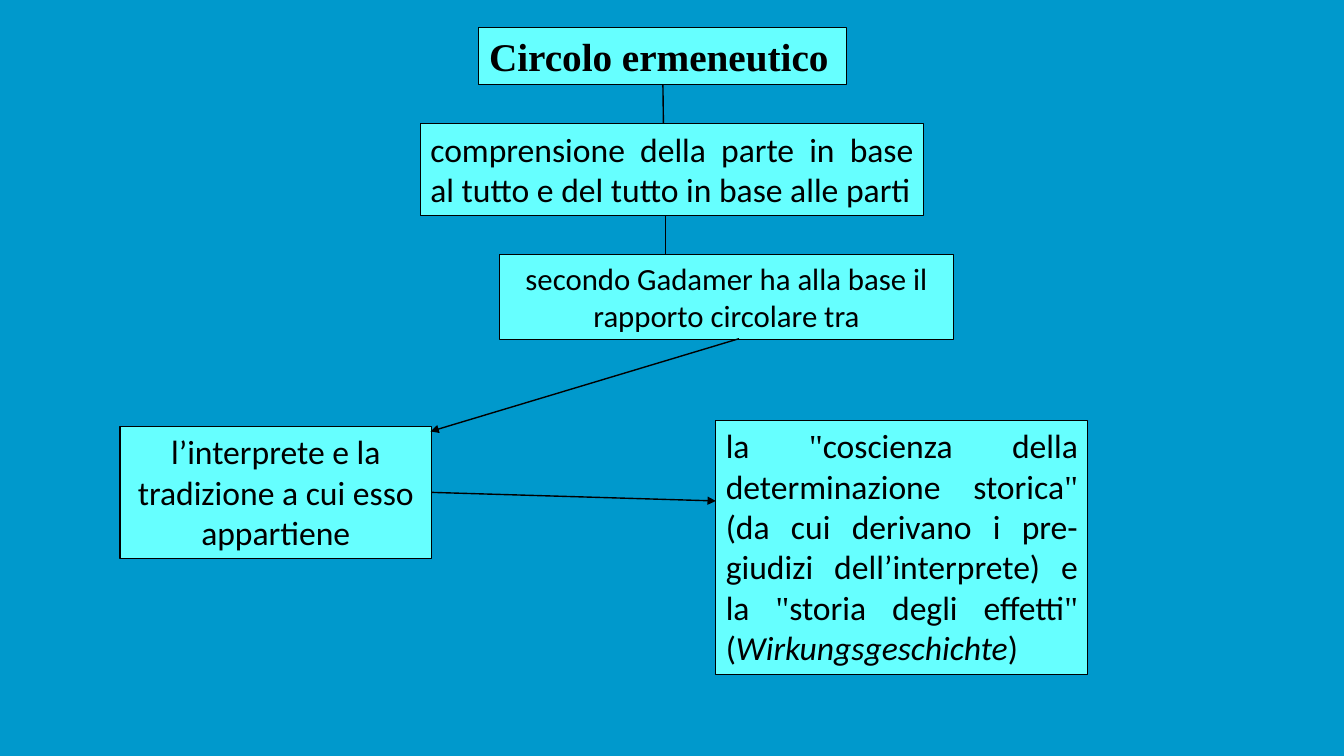
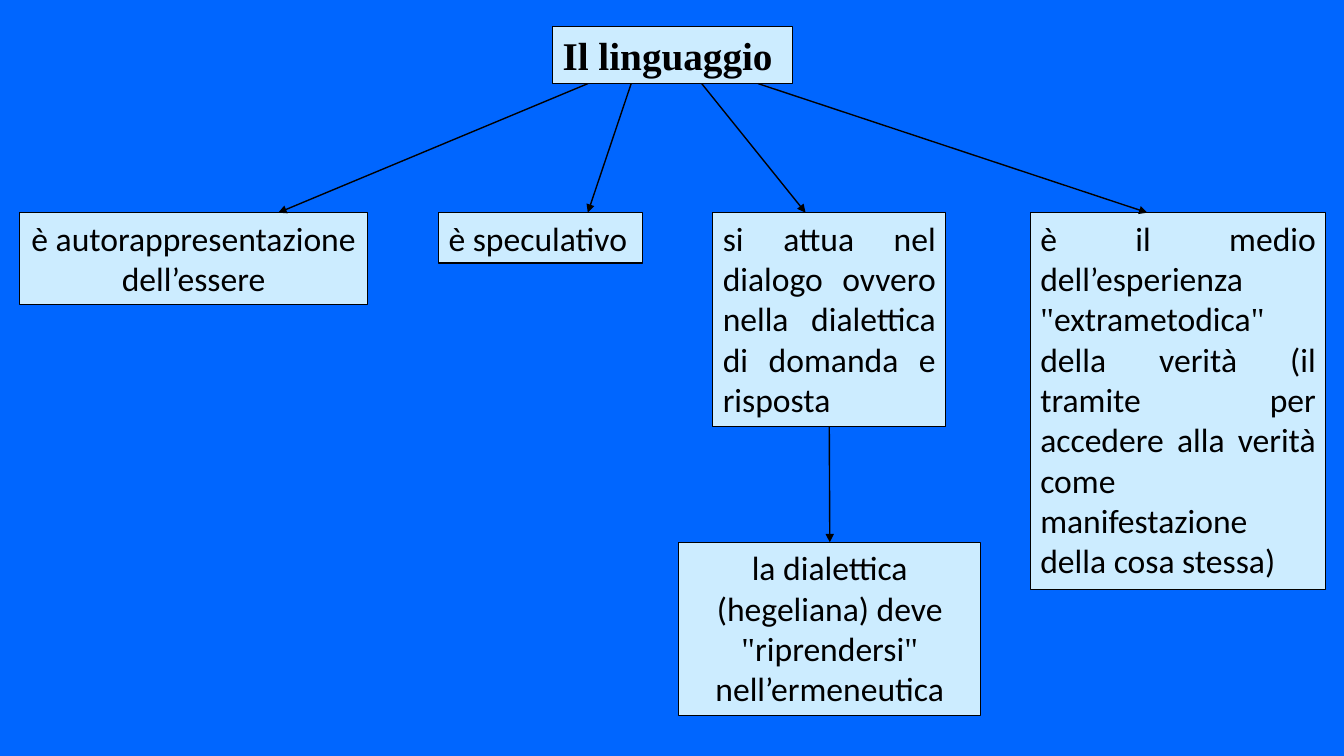
from dataclasses import dataclass

from lxml.etree import SubElement
from pptx import Presentation
from pptx.dml.color import RGBColor as RGB
from pptx.enum.shapes import MSO_CONNECTOR as Conn
from pptx.enum.text import MSO_ANCHOR as Anchor, MSO_AUTO_SIZE as Auto, PP_ALIGN as Align
from pptx.oxml.ns import qn
from pptx.util import Inches, Pt


@dataclass(frozen=True)
class Theme:
    ink: RGB = RGB(0x00, 0x00, 0x00)
    teal: RGB = RGB(0x00, 0x99, 0xCC)
    aqua: RGB = RGB(0x66, 0xFF, 0xFF)
    blue: RGB = RGB(0x00, 0x66, 0xFF)
    pale: RGB = RGB(0xCC, 0xEC, 0xFF)
    serif: str = "Times New Roman"
    sans: str = "Calibri"
    head: int = 28
    body: int = 24
    small: int = 22
    edge: float = 0.75
    rule: float = 1


THEME = Theme()
TOP, BOTTOM, RIGHT = 0, 2, 3


def style(shape, fill, align, face, size, bold=False):
    shape.fill.solid()
    shape.fill.fore_color.rgb = fill
    shape.line.color.rgb = THEME.ink
    shape.line.width = Pt(THEME.edge)
    frame = shape.text_frame
    frame.auto_size = Auto.NONE
    frame.word_wrap = True
    frame.vertical_anchor = Anchor.TOP
    para = frame.paragraphs[0]
    para.alignment = align
    font = para.font
    font.name, font.size, font.bold = face, Pt(size), bold
    font.color.rgb = THEME.ink
    return para


def write(para, text):
    """Add runs: quotation marks go in serif, text between asterisks in italic."""
    for i, part in enumerate(text.split('"')):
        if i:
            mark = para.add_run()
            mark.text = '"'
            mark.font.name = THEME.serif
        for j, piece in enumerate(part.split("*")):
            if piece:
                run = para.add_run()
                run.text = piece
                if j % 2:
                    run.font.italic = True


def start(deck, back, fill, text, area):
    """Add a slide with its background and boxed title."""
    slide = deck.slides.add_slide(deck.slide_layouts[5])
    slide.background.fill.solid()
    slide.background.fill.fore_color.rgb = back
    title = slide.shapes.title
    title.left, title.top, title.width, title.height = map(Inches, area)
    para = style(title, fill, Align.LEFT, THEME.serif, THEME.head, True)
    write(para, text)
    return slide


def box(slide, fill, text, area, align=Align.CENTER, size=THEME.body):
    shape = slide.shapes.add_textbox(*map(Inches, area))
    write(style(shape, fill, align, THEME.sans, size), text)
    return shape


def link(slide, tail, tip, arrow=True):
    """Draw a line; each end is an (x, y) point or a (shape, side) pair."""
    joins = [not isinstance(end[0], (int, float)) for end in (tail, tip)]
    spots = [(0, 0) if join else end for join, end in zip(joins, (tail, tip))]
    line = slide.shapes.add_connector(
        Conn.STRAIGHT, *(Inches(n) for spot in spots for n in spot))
    if joins[0]:
        line.begin_connect(*tail)
    if joins[1]:
        line.end_connect(*tip)
    line.line.color.rgb = THEME.ink
    line.line.width = Pt(THEME.rule)
    if arrow:
        SubElement(line.line._get_or_add_ln(), qn("a:tailEnd"), type="triangle")
    SubElement(line._element.spPr, qn("a:effectLst"))


def circle(deck):
    fill = THEME.aqua
    slide = start(deck, THEME.teal, fill, "Circolo ermeneutico", (4.75, 0.27, 3.65, 0.57))
    box(slide, fill,
        "comprensione della parte in base al tutto e del tutto in base alle parti",
        (4.17, 1.23, 4.99, 0.91), Align.JUSTIFY)
    box(slide, fill, "secondo Gadamer ha alla base il rapporto circolare tra",
        (4.95, 2.53, 4.51, 0.84), size=THEME.small)
    reader = box(slide, fill, "l’interprete e la tradizione a cui esso appartiene",
                 (1.19, 4.23, 3.09, 1.31))
    box(slide, fill,
        'la "coscienza della determinazione storica" (da cui derivano i pre-giudizi '
        'dell’interprete) e la "storia degli effetti" (*Wirkungsgeschichte*)',
        (7.1, 4.17, 3.69, 2.52), Align.JUSTIFY)
    link(slide, (slide.shapes.title, BOTTOM), (6.58, 1.23), arrow=False)
    link(slide, (6.6, 2.14), (6.6, 2.53), arrow=False)
    link(slide, (7.33, 3.36), (4.27, 4.28))
    link(slide, (reader, RIGHT), (7.1, 4.97))


def language(deck):
    fill, row, base = THEME.pale, 2.11, 0.83
    slide = start(deck, THEME.blue, fill, "Il linguaggio", (5.48, 0.26, 2.38, 0.57))
    box(slide, fill, "è autorappresentazione dell’essere", (0.19, row, 3.46, 0.91))
    box(slide, fill, "è speculativo", (4.35, row, 2.02, 0.5), Align.LEFT)
    talk = box(slide, fill,
               "si attua nel dialogo ovvero nella dialettica di domanda e risposta",
               (7.07, row, 2.31, 2.12), Align.JUSTIFY)
    box(slide, fill,
        'è il medio dell’esperienza "extrametodica" della verità (il tramite per '
        "accedere alla verità come manifestazione della cosa stessa)",
        (10.22, row, 2.93, 3.74), Align.JUSTIFY)
    logic = box(slide, fill,
                'la dialettica (hegeliana) deve "riprendersi" nell’ermeneutica',
                (6.73, 5.38, 3, 1.72))
    for left, right in ((5.83, 2.76), (6.26, 5.83), (6.96, 7.99), (7.52, 11.38)):
        link(slide, (left, base), (right, row))
    link(slide, (talk, BOTTOM), (logic, TOP))


def main():
    deck = Presentation()
    deck.slide_width, deck.slide_height = Inches(13.33), Inches(7.5)
    circle(deck)
    language(deck)
    deck.save("out.pptx")


if __name__ == "__main__":
    main()
